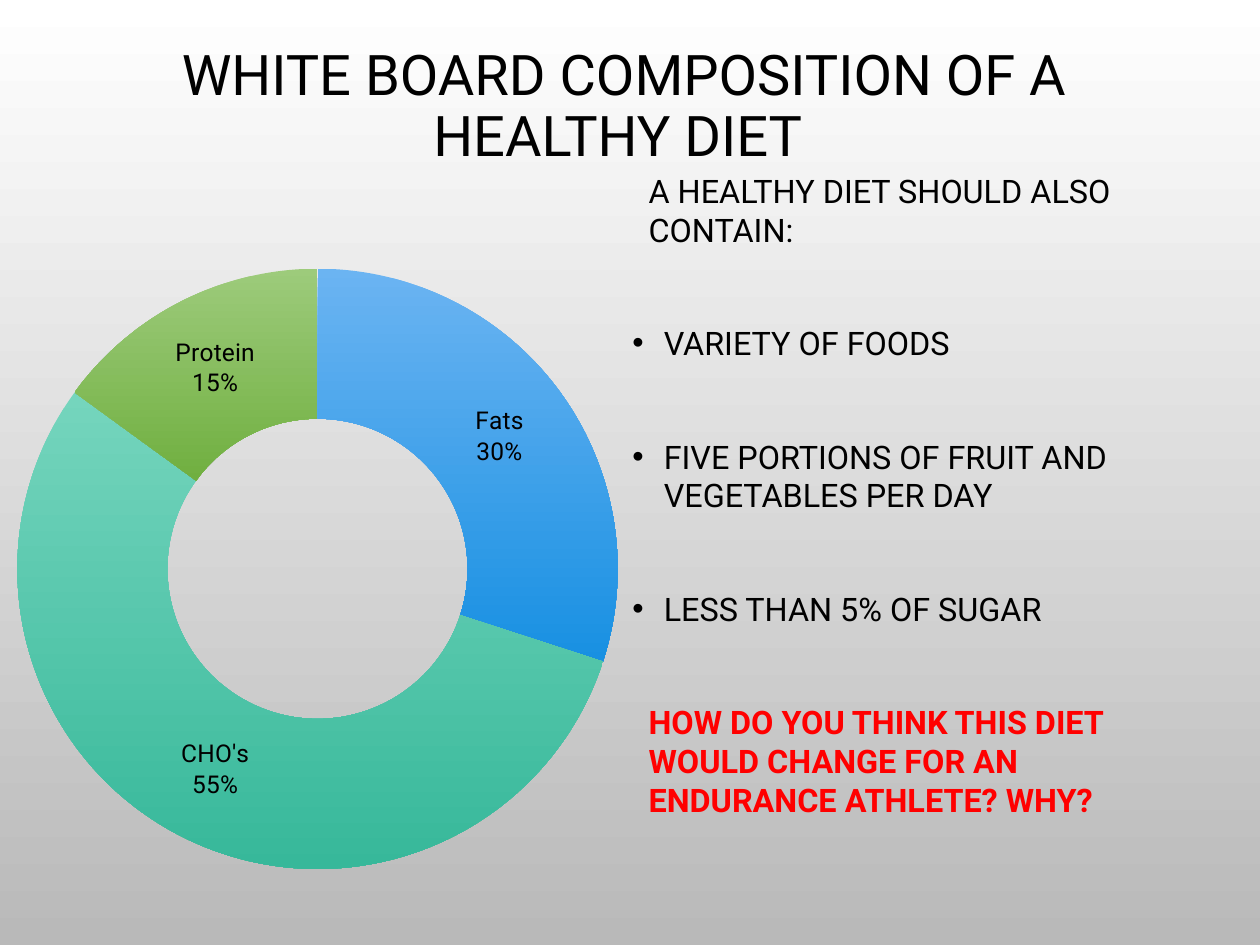
import pptx
import pptx.util
import pptx.chart.data
import pptx.dml.color
import pptx.enum.chart
import pptx.enum.text
import pptx.oxml
import pptx.oxml.ns
from lxml import etree

Inches, Pt = pptx.util.Inches, pptx.util.Pt
RGB = pptx.dml.color.RGBColor.from_string
qn = pptx.oxml.ns.qn

THEME = {
    "font": "Roboto", "chart_font": "Calibri",
    "text": "000000", "question": "FF0000",
    "background": ("FFFFFF", "B9B9B9"),
    "title_size": 32, "body_size": 18.5, "chart_size": 18, "label_size": 14,
}
NUTRIENTS = [
    ("Fats", 30, ("6BB4F2", "1890E2")),
    ("CHO's", 55, ("75D5BD", "37B89A")),
    ("Protein", 15, ("9DCB7B", "70AF40")),
]
BODY = [
    ("A HEALTHY DIET SHOULD ALSO CONTAIN:", "plain"),
    ("VARIETY OF FOODS", "bullet"),
    ("FIVE PORTIONS OF FRUIT AND VEGETABLES PER DAY", "bullet"),
    ("LESS THAN 5% OF SUGAR", "bullet"),
    ("HOW DO YOU THINK THIS DIET WOULD CHANGE FOR AN ENDURANCE ATHLETE? WHY?", "question"),
]


def fade(fill, colors):
    fill.gradient()
    fill.gradient_angle = 270
    for stop, color in zip(fill.gradient_stops, colors):
        stop.color.rgb = RGB(color)


def style(font, size, name=THEME["font"], color=THEME["text"], bold=False):
    values = {"size": Pt(size), "name": name, "bold": bold}
    for key, value in values.items():
        setattr(font, key, value)
    font.color.rgb = RGB(color)


prs = pptx.Presentation()
prs.slide_width, prs.slide_height = Inches(10), Inches(7.5)
s = prs.slides.add_slide(prs.slide_layouts[6])
fade(s.background.fill, THEME["background"])

title = s.shapes.add_textbox(Inches(0.5), Inches(0.17), Inches(8.91), Inches(1.37))
tf = title.text_frame
tf.word_wrap = True
tf.vertical_anchor = pptx.enum.text.MSO_ANCHOR.MIDDLE
p = tf.paragraphs[0]
p.alignment = pptx.enum.text.PP_ALIGN.CENTER
p.line_spacing = 0.9
r = p.add_run()
r.text = "WHITE BOARD COMPOSITION OF A HEALTHY DIET "
style(r.font, THEME["title_size"])

data = pptx.chart.data.CategoryChartData()
data.categories = [name for name, share, colors in NUTRIENTS]
data.add_series("Series 1", [share for name, share, colors in NUTRIENTS])
chart = s.shapes.add_chart(
    pptx.enum.chart.XL_CHART_TYPE.DOUGHNUT,
    Inches(0), Inches(1.78), Inches(5.04), Inches(5.47), data,
).chart
chart.has_title = chart.has_legend = False
style(chart.font, THEME["chart_size"], THEME["chart_font"])
chart.plots[0].vary_by_categories = True
series = chart.plots[0].series[0]
for i, (name, share, colors) in enumerate(NUTRIENTS):
    point = series.points[i].format
    fade(point.fill, colors)
    point.line.fill.background()

labels = series.data_labels
label_format = {
    "show_value": False, "show_category_name": True, "show_percentage": True,
    "number_format": "0%", "number_format_is_linked": False,
}
for key, value in label_format.items():
    setattr(labels, key, value)
style(labels.font, THEME["label_size"])
separator = etree.Element(qn("c:separator"))
separator.text = "\n"
labels._element.find(qn("c:showBubbleSize")).addnext(separator)

body = s.shapes.add_textbox(Inches(4.92), Inches(1.31), Inches(4.8), Inches(5.51))
tf = body.text_frame
tf.word_wrap = True
for i, (text, kind) in enumerate(BODY):
    p = tf.add_paragraph() if i else tf.paragraphs[0]
    if i:
        p.space_before = Pt(42.5)
    pPr = p._p.get_or_add_pPr()
    bullet = kind == "bullet"
    pPr.set("marL", str(Inches(0.25 if bullet else 0.13)))
    pPr.set("indent", str(Inches(-0.25 if bullet else 0)))
    if bullet:
        etree.SubElement(pPr, qn("a:buFont"), typeface="Arial")
        etree.SubElement(pPr, qn("a:buChar"), char="•")
    r = p.add_run()
    r.text = text
    asks = kind == "question"
    style(r.font, THEME["body_size"], color=THEME["question" if asks else "text"], bold=asks)

prs.save("out.pptx")
